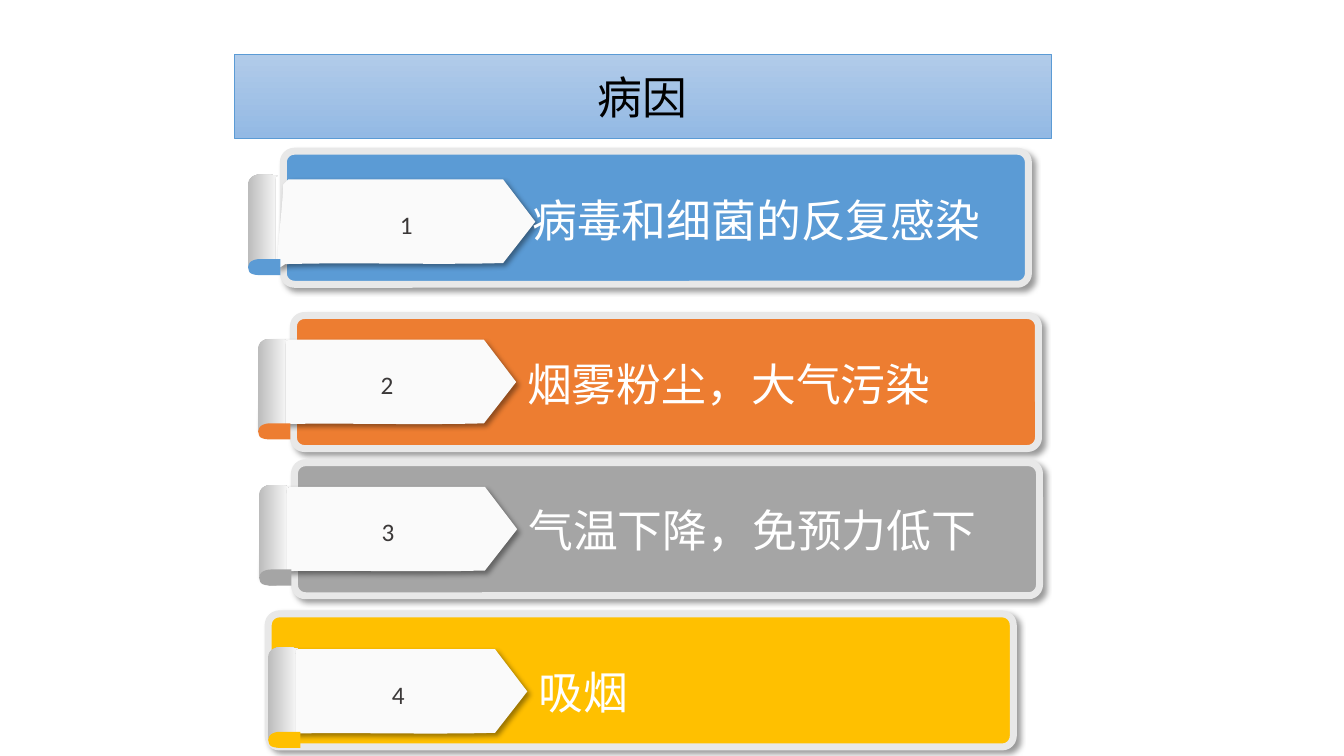
from lxml.etree import SubElement
from pptx import Presentation
from pptx.dml.color import RGBColor
from pptx.enum.shapes import MSO_SHAPE
from pptx.enum.text import MSO_ANCHOR, PP_ALIGN
from pptx.oxml.ns import qn
from pptx.util import Inches, Pt

COLORS = {
    "title_top": "B1CBE9", "title_bottom": "93B9E4", "title_line": "5B9BD5",
    "blue": "5B9BD5", "orange": "ED7D31", "gray": "A5A5A5", "gold": "FFC000",
    "card_line": "E8E8E8", "tag": "FAFAFA", "roll_dark": "BCBCBC", "roll_light": "F9F9F9",
    "number": "3B3838", "white": "FFFFFF", "black": "000000",
}
FONT = "Calibri"
TITLE = "病因"
CAUSES = [
    {"text": "病毒和细菌的反复感染", "color": "blue", "card": (2.81, 1.5),
     "tag": (2.75, 1.78), "roll": (2.46, 1.73), "text_left": 5.18},
    {"text": "烟雾粉尘，大气污染", "color": "orange", "card": (2.91, 3.13),
     "tag": (2.56, 3.37), "roll": (2.56, 3.36), "text_left": 5.13},
    {"text": "气温下降，免预力低下", "color": "gray", "card": (2.92, 4.59),
     "tag": (2.57, 4.83), "roll": (2.57, 4.81), "text_left": 5.14},
    {"text": "吸烟", "color": "gold", "card": (2.66, 6.09),
     "tag": (2.67, 6.44), "roll": (2.66, 6.42), "text_left": 5.24},
]
CARD_SIZE = (7.39, 1.32)
TEXT_SIZE = (5.02, 1.09)
TEXT_RISE = 0.1
FOLD_DROP = 0.84

TAG_OUTLINE = [
    (0.06, 0.05), (0.11, 0), (2.24, 0), (2.56, 0.42), (2.24, 0.83),
    (1.52, 0.85, 0.8, 0.82, 0.08, 0.84), (0, 0.89),
    (0, 0.6, 0.05, 0.35, 0.06, 0.05),
]
ROLL_OUTLINE = [
    (0, 0.1), (0, 0.04, 0.06, 0, 0.13, 0), (0.15, 0, 0.26, 0, 0.29, 0.02),
    (0.31, 0.04, 0.26, -0.04, 0.27, 0.1), (0.27, 0.89),
    (0.27, 0.95, 0.2, 1, 0.13, 1), (0.06, 1, 0, 0.95, 0, 0.89),
]
FOLD_OUTLINE = [
    (0.12, 0), (0.32, 0), (0.32, 0.16), (0.12, 0.16),
    (0.07, 0.16, 0.02, 0.15, 0.01, 0.12), (0, 0.08), (0.01, 0.05),
    (0.02, 0.02, 0.07, 0, 0.12, 0),
]


def rgb(name):
    return RGBColor.from_string(COLORS[name])


def solid(shape, color):
    shape.fill.solid()
    shape.fill.fore_color.rgb = rgb(color)


def gradient(shape, colors, angle):
    shape.fill.gradient()
    shape.fill.gradient_angle = angle
    for stop, color in zip(shape.fill.gradient_stops, colors):
        stop.color.rgb = rgb(color)


def add_shadow(shape):
    effects = shape._element.spPr.find(qn("a:effectLst"))
    shadow = SubElement(effects, qn("a:outerShdw"), blurRad=str(Pt(4)), dist=str(Pt(3)),
                        dir="2700000", algn="tl", rotWithShape="0")
    color = SubElement(shadow, qn("a:srgbClr"), val=COLORS["black"])
    SubElement(color, qn("a:alpha"), val="40000")


def write(shape, text, size, color, alignment):
    frame = shape.text_frame
    frame.text = text
    frame.word_wrap = True
    frame.vertical_anchor = MSO_ANCHOR.MIDDLE
    paragraph = frame.paragraphs[0]
    paragraph.alignment = alignment
    font = paragraph.runs[0].font
    font.name, font.size, font.color.rgb = FONT, Pt(size), rgb(color)


def flatten(outline, steps=8):
    points = [outline[0]]
    for segment in outline[1:]:
        if len(segment) == 2:
            points.append(segment)
            continue
        corners = [points[-1], segment[:2], segment[2:4], segment[4:]]
        for step in range(1, steps + 1):
            t = step / steps
            weights = ((1 - t) ** 3, 3 * t * (1 - t) ** 2, 3 * t * t * (1 - t), t ** 3)
            points.append(tuple(sum(weight * corner[axis] for weight, corner in zip(weights, corners))
                                for axis in (0, 1)))
    return points


def add_outline(shapes, outline, left, top):
    points = [(Inches(left + x), Inches(top + y)) for x, y in flatten(outline)]
    builder = shapes.build_freeform(*points[0])
    builder.add_line_segments(points[1:], close=True)
    shape = builder.convert_to_shape()
    shape.line.fill.background()
    shape.shadow.inherit = False
    return shape


def add_title(slide):
    title = slide.shapes.add_shape(MSO_SHAPE.RECTANGLE, Inches(2.32), Inches(0.54),
                                   Inches(8.11), Inches(0.83))
    gradient(title, ("title_top", "title_bottom"), 270)
    title.line.color.rgb = rgb("title_line")
    title.line.width = Pt(0.5)
    title.shadow.inherit = False
    write(title, TITLE, 32, "black", PP_ALIGN.CENTER)


def add_cause(slide, number, cause):
    shapes = slide.shapes.add_group_shape().shapes
    roll_left, roll_top = cause["roll"]

    card = shapes.add_shape(MSO_SHAPE.ROUNDED_RECTANGLE,
                            *map(Inches, cause["card"] + CARD_SIZE))
    card.adjustments[0] = 0.083
    solid(card, cause["color"])
    card.line.color.rgb = rgb("card_line")
    card.line.width = Pt(5)
    card.shadow.inherit = False
    add_shadow(card)

    tag = add_outline(shapes, TAG_OUTLINE, *cause["tag"])
    solid(tag, "tag")
    add_shadow(tag)
    write(tag, str(number), 18, "number", PP_ALIGN.CENTER)

    roll = add_outline(shapes, ROLL_OUTLINE, roll_left, roll_top)
    gradient(roll, ("roll_dark", "roll_light"), 0)

    fold = add_outline(shapes, FOLD_OUTLINE, roll_left, roll_top + FOLD_DROP)
    solid(fold, cause["color"])

    text_place = (cause["text_left"], roll_top - TEXT_RISE)
    label = shapes.add_textbox(*map(Inches, text_place + TEXT_SIZE))
    write(label, cause["text"], 32, "white", PP_ALIGN.LEFT)


def main():
    presentation = Presentation()
    presentation.slide_width = Inches(13.33)
    presentation.slide_height = Inches(7.5)
    slide = presentation.slides.add_slide(presentation.slide_layouts[6])
    add_title(slide)
    for number, cause in enumerate(CAUSES, 1):
        add_cause(slide, number, cause)
    presentation.save("out.pptx")


if __name__ == "__main__":
    main()
